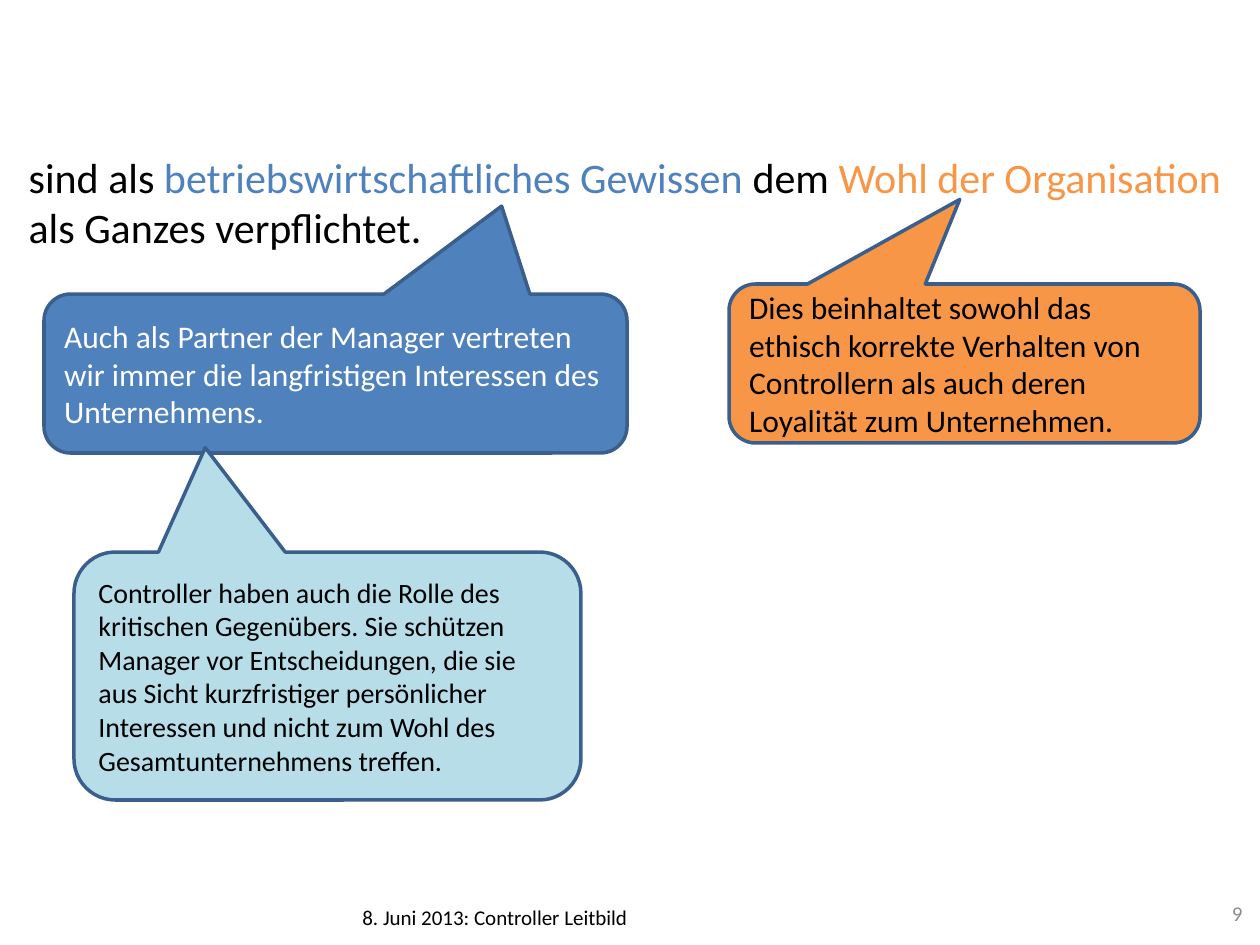
"""Build the slide on the controller's commitment to the whole organisation."""
import pptx
import pptx.dml.color
import pptx.enum.shapes
import pptx.enum.text
import pptx.util

EMU_PER_PX = 914400 / 126
FONT = "Calibri"
BLACK, WHITE, GREY = "000000", "FFFFFF", "8C8C8C"
BLUE, ORANGE, LIGHT_BLUE, OUTLINE = "4F81BD", "F79646", "B7DEE8", "3A5F8C"
ANCHOR = pptx.enum.text.MSO_ANCHOR
ALIGN = pptx.enum.text.PP_ALIGN

STATEMENT = [
    ("sind als ", BLACK),
    ("betriebswirtschaftliches Gewissen ", BLUE),
    ("dem", BLACK),
    (" Wohl der Organisation ", ORANGE),
    ("als Ganzes verpflichtet.", BLACK),
]
CALLOUTS = [
    ("Auch als Partner der Manager vertreten wir immer die langfristigen "
     "Interessen des Unternehmens.",
     (44, 294, 583, 159), (0.285, -1.053), BLUE, WHITE, 18),
    ("Controller haben auch die Rolle des kritischen Gegenübers. Sie schützen "
     "Manager vor Entscheidungen, die sie aus Sicht kurzfristiger persönlicher "
     "Interessen und nicht zum Wohl des Gesamtunternehmens treffen.",
     (74, 552, 507, 248), (-0.241, -0.921), LIGHT_BLUE, BLACK, 16),
    ("Dies beinhaltet sowohl das ethisch korrekte Verhalten von Controllern "
     "als auch deren Loyalität zum Unternehmen.",
     (729, 284, 471, 159), (-0.01, -1.032), ORANGE, BLACK, 18),
]


def px(length):
    """Turn whole pixels into EMU."""
    return pptx.util.Emu(round(length * EMU_PER_PX))


def color(value):
    """Turn a hex string into a colour."""
    return pptx.dml.color.RGBColor.from_string(value)


def format_run(run, size, value):
    """Set the font, size and colour of a run."""
    run.font.name = FONT
    run.font.size = pptx.util.Pt(size)
    run.font.color.rgb = color(value)


def set_text(shape, text, size, value, anchor, align=ALIGN.LEFT):
    """Fill a shape with one wrapped paragraph."""
    frame = shape.text_frame
    frame.text = text
    frame.word_wrap = True
    frame.vertical_anchor = anchor
    paragraph = frame.paragraphs[0]
    paragraph.alignment = align
    format_run(paragraph.runs[0], size, value)


def add_statement(slide, left, top, width, height):
    """Place the coloured statement in the title placeholder."""
    title = slide.shapes.title
    title.left, title.top = px(left), px(top)
    title.width, title.height = px(width), px(height)
    frame = title.text_frame
    frame.word_wrap = True
    frame.auto_size = pptx.enum.text.MSO_AUTO_SIZE.NONE
    frame.vertical_anchor = ANCHOR.TOP
    paragraph = frame.paragraphs[0]
    paragraph.alignment = ALIGN.LEFT
    paragraph.space_after = pptx.util.Pt(6)
    for text, value in STATEMENT:
        run = paragraph.add_run()
        run.text = text
        format_run(run, 24, value)


def add_callout(slide, text, box, tip, fill, text_color, size):
    """Add a rounded callout whose tip is given relative to its centre."""
    shape = slide.shapes.add_shape(
        pptx.enum.shapes.MSO_SHAPE.ROUNDED_RECTANGULAR_CALLOUT, *map(px, box))
    for index, value in enumerate(tip):
        shape.adjustments[index] = value
    shape.shadow.inherit = False
    shape.fill.solid()
    shape.fill.fore_color.rgb = color(fill)
    shape.line.color.rgb = color(OUTLINE)
    shape.line.width = pptx.util.Pt(2)
    set_text(shape, text, size, text_color, ANCHOR.MIDDLE)


def add_label(slide, text, box, value, anchor, align):
    """Add a small text box at the foot of the slide."""
    label = slide.shapes.add_textbox(*map(px, box))
    set_text(label, text, 12, value, anchor, align)


def main():
    """Build and save the presentation."""
    presentation = pptx.Presentation()
    presentation.slide_width, presentation.slide_height = px(1260), px(945)
    slide = presentation.slides.add_slide(presentation.slide_layouts[5])
    add_statement(slide, 16, 145, 1230, 115)
    for callout in CALLOUTS:
        add_callout(slide, *callout)
    add_label(slide, "8. Juni 2013: Controller Leitbild", (350, 898, 656, 50),
              BLACK, ANCHOR.TOP, ALIGN.LEFT)
    add_label(slide, "9", (1174, 888, 81, 50), GREY, ANCHOR.MIDDLE, ALIGN.RIGHT)
    presentation.save("out.pptx")


if __name__ == "__main__":
    main()
